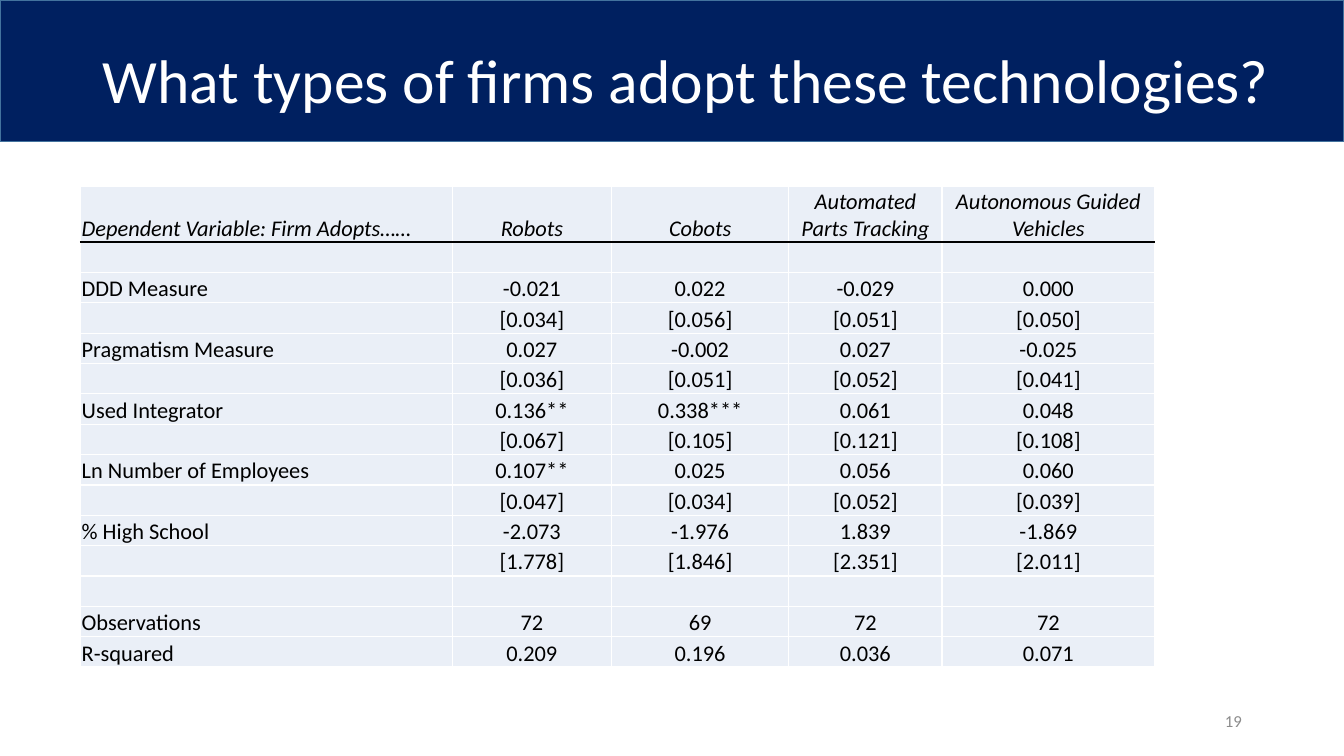
from dataclasses import dataclass

from lxml.etree import SubElement
from pptx import Presentation
from pptx.dml.color import RGBColor
from pptx.enum.shapes import MSO_SHAPE
from pptx.enum.text import MSO_ANCHOR, PP_ALIGN
from pptx.oxml.ns import qn
from pptx.slide import Slide
from pptx.table import _Cell
from pptx.util import Cm, Pt

FONT = "Calibri"
NAVY, WHITE, BLACK, PALE = "002060", "FFFFFF", "000000", "EAEFF7"
TABLE_LEFT, TABLE_TOP = 2.03, 4.7
COLUMN_WIDTHS = (9.37, 4.01, 4.47, 3.86, 5.36)
HEADER_HEIGHT, BODY_HEIGHT = 1.4, 10.72
HEADINGS = (
    "Dependent Variable: Firm Adopts……",
    "Robots",
    "Cobots",
    "Automated Parts Tracking",
    "Autonomous Guided Vehicles",
)


@dataclass
class Label:
    text: str
    left: float
    top: float
    width: float
    height: float
    size: int
    color: str
    align: PP_ALIGN = PP_ALIGN.LEFT
    line_spacing: float = 1.0


@dataclass
class Estimate:
    name: str
    values: tuple[str, ...]
    errors: tuple[str, ...] = ()


LABELS = (
    Label("What types of firms adopt these technologies?",
          2.34, -0.48, 30.33, 5.18, 44, WHITE, line_spacing=0.9),
    Label("19", 23.93, 17.65, 7.62, 1.02, 12, "8C8C8C", PP_ALIGN.RIGHT),
)
COEFFICIENTS = (
    Estimate("DDD Measure", ("-0.021", "0.022", "-0.029", "0.000"),
             ("0.034", "0.056", "0.051", "0.050")),
    Estimate("Pragmatism Measure", ("0.027", "-0.002", "0.027", "-0.025"),
             ("0.036", "0.051", "0.052", "0.041")),
    Estimate("Used Integrator", ("0.136**", "0.338***", "0.061", "0.048"),
             ("0.067", "0.105", "0.121", "0.108")),
    Estimate("Ln Number of Employees", ("0.107**", "0.025", "0.056", "0.060"),
             ("0.047", "0.034", "0.052", "0.039")),
    Estimate("% High School", ("-2.073", "-1.976", "1.839", "-1.869"),
             ("1.778", "1.846", "2.351", "2.011")),
)
STATISTICS = (
    Estimate("Observations", ("72", "69", "72", "72")),
    Estimate("R-squared", ("0.209", "0.196", "0.036", "0.071")),
)


def rgb(color: str) -> RGBColor:
    return RGBColor.from_string(color)


def add_banner(s: Slide) -> None:
    sp = s.shapes.add_shape(MSO_SHAPE.RECTANGLE, 0, 0, Cm(33.87), Cm(3.56))
    sp.shadow.inherit = False
    sp.fill.solid()
    sp.fill.fore_color.rgb = rgb(NAVY)
    sp.line.color.rgb = rgb("43739E")
    sp.line.width = Pt(1)


def add_label(s: Slide, label: Label) -> None:
    sp = s.shapes.add_textbox(Cm(label.left), Cm(label.top), Cm(label.width), Cm(label.height))
    tf = sp.text_frame
    tf.word_wrap = True
    tf.vertical_anchor = MSO_ANCHOR.MIDDLE
    p = tf.paragraphs[0]
    p.text = label.text
    p.alignment = label.align
    p.line_spacing = label.line_spacing
    p.font.name = FONT
    p.font.size = Pt(label.size)
    p.font.color.rgb = rgb(label.color)


def set_borders(cell: _Cell, top: str, bottom: str) -> None:
    tc_pr = cell._tc.get_or_add_tcPr()
    for side, color in (("L", WHITE), ("R", WHITE), ("T", top), ("B", bottom)):
        ln = SubElement(tc_pr, qn(f"a:ln{side}"), w=str(Pt(1)))
        fill = SubElement(ln, qn("a:solidFill"))
        SubElement(fill, qn("a:srgbClr"), val=color)


def fill_cell(cell: _Cell, text: str, row: int, column: int) -> None:
    set_borders(cell, BLACK if row == 1 else WHITE, BLACK if row == 0 else WHITE)
    cell.fill.solid()
    cell.fill.fore_color.rgb = rgb(PALE)
    cell.margin_left = cell.margin_right = cell.margin_top = Cm(0.03)
    cell.margin_bottom = 0
    cell.vertical_anchor = MSO_ANCHOR.BOTTOM
    p = cell.text_frame.paragraphs[0]
    p.text = text
    p.alignment = PP_ALIGN.CENTER if column else PP_ALIGN.LEFT
    p.font.name = FONT
    p.font.size = Pt(16)
    p.font.italic = row == 0
    p.font.color.rgb = rgb(BLACK)
    if not text:
        SubElement(p._p, qn("a:endParaRPr"), sz="1600")


def table_rows() -> list[tuple[str, ...]]:
    blank = ("",) * len(HEADINGS)
    rows = [HEADINGS, blank]
    for item in COEFFICIENTS:
        rows.append((item.name, *item.values))
        rows.append(("", *(f"[{error}]" for error in item.errors)))
    rows.append(blank)
    rows.extend((item.name, *item.values) for item in STATISTICS)
    return rows


def add_results(s: Slide) -> None:
    rows = table_rows()
    table = s.shapes.add_table(
        len(rows), len(HEADINGS), Cm(TABLE_LEFT), Cm(TABLE_TOP),
        Cm(sum(COLUMN_WIDTHS)), Cm(HEADER_HEIGHT + BODY_HEIGHT),
    ).table
    table.first_row = False
    table.horz_banding = False
    for column, width in zip(table.columns, COLUMN_WIDTHS):
        column.width = Cm(width)
    for i, texts in enumerate(rows):
        table.rows[i].height = Cm(BODY_HEIGHT / (len(rows) - 1) if i else HEADER_HEIGHT)
        for j, text in enumerate(texts):
            fill_cell(table.cell(i, j), text, i, j)


def main() -> None:
    prs = Presentation()
    prs.slide_width, prs.slide_height = Cm(33.87), Cm(19.05)
    s = prs.slides.add_slide(prs.slide_layouts[6])
    add_banner(s)
    for label in LABELS:
        add_label(s, label)
    add_results(s)
    prs.save("out.pptx")


if __name__ == "__main__":
    main()
